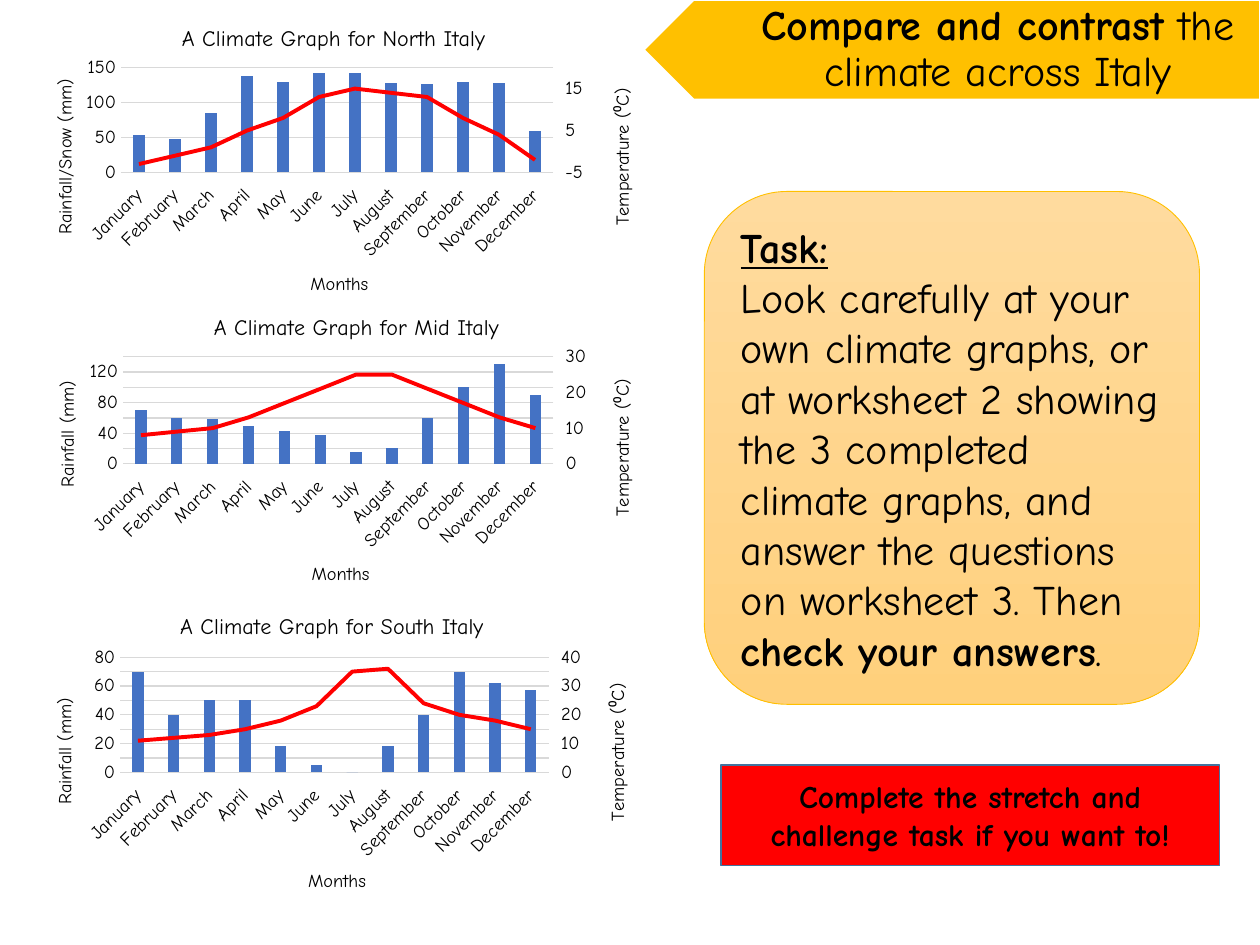
from copy import deepcopy

from lxml import etree
from pptx import Presentation, util as u
from pptx.chart import axis, data
from pptx.dml.color import RGBColor
from pptx.enum import chart as kinds, shapes, text
from pptx.oxml.ns import qn

FONT = "Comic Neue"
BLACK = RGBColor(0x00, 0x00, 0x00)
WHITE = RGBColor(0xFF, 0xFF, 0xFF)
GOLD = RGBColor(0xFF, 0xC0, 0x00)
PEACH = RGBColor(0xFF, 0xDB, 0x9E)
AMBER = RGBColor(0xFF, 0xD0, 0x7C)
RED = RGBColor(0xFF, 0x00, 0x00)
BLUE = RGBColor(0x44, 0x72, 0xC4)
NAVY = RGBColor(0x43, 0x73, 0x9E)
GREY = RGBColor(0xD9, 0xD9, 0xD9)

COLS, ROWS = 100, 75
CELL = u.Inches(0.1)
MONTHS = ["January", "February", "March", "April", "May", "June", "July",
          "August", "September", "October", "November", "December"]


def place(box):
    """Turn columns and rows of the grid into slide lengths."""
    return [u.Emu(round(n * CELL)) for n in box]


def style(font, size, bold=False):
    font.name, font.size, font.bold = FONT, u.Pt(size), bold
    font.color.rgb = BLACK


def add_run(para, words, size, bold=False, under=False):
    run = para.add_run()
    run.text = words
    style(run.font, size, bold)
    if under:
        run.font.underline = True


def add_box(slide, kind, box, line, width):
    shape = slide.shapes.add_shape(kind, *place(box))
    shape.shadow.inherit = False
    shape.line.color.rgb = line
    shape.line.width = u.Pt(width)
    frame = shape.text_frame
    frame.word_wrap = True
    frame.vertical_anchor = text.MSO_ANCHOR.MIDDLE
    return shape


def fill_box(shape, color):
    shape.fill.solid()
    shape.fill.fore_color.rgb = color


def add_tag(parent, tag, val):
    return etree.SubElement(parent, qn(tag), val=str(val))


def set_layout(parent, spot, index):
    """Fix a chart part at shares of the chart: x, y and maybe w, h."""
    for old in parent.findall(qn("c:layout")):
        parent.remove(old)
    layout = etree.Element(qn("c:layout"))
    parent.insert(index, layout)
    manual = etree.SubElement(layout, qn("c:manualLayout"))
    if len(spot) == 4:
        add_tag(manual, "c:layoutTarget", "inner")
    for name in ("xMode", "yMode"):
        add_tag(manual, "c:" + name, "edge")
    for name, val in zip("xywh", spot):
        add_tag(manual, "c:" + name, val)


def set_title(owner, title, words, size, spot, turn=False):
    """Title a chart or an axis; owner holds the c:title element."""
    frame = title.text_frame
    add_run(frame.paragraphs[0], words, size)
    if turn:
        body = frame._txBody.find(qn("a:bodyPr"))
        body.set("rot", "-5400000")
        body.set("vert", "horz")
    set_layout(owner.find(qn("c:title")), spot, 1)


def set_scale(side, low, high, step):
    side.minimum_scale, side.maximum_scale = low, high
    side.major_unit = step
    side.major_tick_mark = kinds.XL_TICK_MARK.NONE
    side.format.line.fill.background()
    style(side.tick_labels.font, 10.5)


def add_right(area):
    """Move the second series to a line on its own right-hand axis."""
    bar = area.find(qn("c:barChart"))
    line = etree.Element(qn("c:lineChart"))
    bar.addnext(line)
    add_tag(line, "c:grouping", "standard")
    add_tag(line, "c:varyColors", 0)
    ser = bar.findall(qn("c:ser"))[1]
    for flag in ser.findall(qn("c:invertIfNegative")):
        ser.remove(flag)
    line.append(ser)
    add_tag(line, "c:marker", 1)
    cat, val = area.find(qn("c:catAx")), area.find(qn("c:valAx"))
    cat2, val2 = deepcopy(cat), deepcopy(val)
    val.addnext(val2)
    val2.addnext(cat2)
    for side, own, other in ((cat2, 5001, 5002), (val2, 5002, 5001)):
        side.find(qn("c:axId")).set("val", str(own))
        side.find(qn("c:crossAx")).set("val", str(other))
        add_tag(line, "c:axId", own)
    cat2.find(qn("c:delete")).set("val", "1")
    val2.find(qn("c:axPos")).set("val", "r")
    val2.find(qn("c:crosses")).set("val", "max")
    return axis.ValueAxis(val2)


def add_graph(slide, box, place_name, unit, rain, heat, left, right, spots):
    """Draw rain as columns and heat as a line; spots place the titles."""
    feed = data.CategoryChartData()
    feed.categories = MONTHS
    feed.add_series("Series 1", rain)
    feed.add_series("Series 2", heat)
    chart = slide.shapes.add_chart(
        kinds.XL_CHART_TYPE.COLUMN_CLUSTERED, *place(box), feed).chart
    style(chart.font, 10.5)
    chart.has_legend = False
    head, rise, fall, deep = spots
    chart.has_title = True
    set_title(chart._chartSpace.chart, chart.chart_title,
              f"A Climate Graph for {place_name} Italy", 12.6, (head, 0.065))
    area = chart._chartSpace.chart.plotArea
    set_layout(area, (0.165, 0.215, 0.69, deep), 0)

    base, side = chart.category_axis, chart.value_axis
    side.has_major_gridlines = False
    set_scale(side, *left)
    temp = add_right(area)
    set_scale(temp, *right)
    temp.major_tick_mark = kinds.XL_TICK_MARK.OUTSIDE
    side.has_major_gridlines = True
    side.major_gridlines.format.line.color.rgb = GREY
    side.major_gridlines.format.line.width = u.Pt(0.75)

    base.major_tick_mark = kinds.XL_TICK_MARK.NONE
    base.tick_label_position = kinds.XL_TICK_LABEL_POSITION.LOW
    base.format.line.color.rgb = GREY
    base.format.line.width = u.Pt(0.75)
    style(base.tick_labels.font, 10.5)
    base._element.find(qn("c:txPr")).find(qn("a:bodyPr")).set("rot", "-2700000")
    for part, words, spot in ((base, "Months", (0.462, 0.85)),
                              (side, unit, (0.05, rise)),
                              (temp, "Temperature (⁰C)", (0.94, fall))):
        set_title(part._element, part.axis_title, words, 10.5, spot,
                  part is not base)

    bars, line = chart.plots
    bars.gap_width = 219
    bars.vary_by_categories = False
    fill_box(bars.series[0].format, BLUE)
    curve = line.series[0]
    curve.smooth = False
    curve.marker.style = kinds.XL_MARKER_STYLE.NONE
    curve.format.line.color.rgb = RED
    curve.format.line.width = u.Pt(2.25)


def add_header(slide, box):
    x, y, w, h = box
    arrow = add_box(slide, shapes.MSO_SHAPE.PENTAGON, box, WHITE, 1)
    arrow.rotation = 180
    fill_box(arrow, GOLD)
    inset = 2.8
    frame = slide.shapes.add_textbox(
        *place((x + inset, y, w - inset, h))).text_frame
    frame.word_wrap = True
    frame.vertical_anchor = text.MSO_ANCHOR.MIDDLE
    frame.margin_left, frame.margin_right = u.Inches(0.64), u.Inches(0.19)
    frame.margin_top = frame.margin_bottom = u.Inches(0.1)
    para = frame.paragraphs[0]
    para.alignment = text.PP_ALIGN.CENTER
    para.line_spacing = 0.9
    add_run(para, "Compare and contrast ", 24, True)
    add_run(para, "the climate across Italy", 24)


def add_task(slide, box):
    card = add_box(slide, shapes.MSO_SHAPE.ROUNDED_RECTANGLE, box, GOLD, 0.5)
    card.fill.gradient()
    card.fill.gradient_angle = 270
    for stop, color in zip(card.fill.gradient_stops, (PEACH, AMBER)):
        stop.color.rgb = color
    head, body = card.text_frame.paragraphs[0], card.text_frame.add_paragraph()
    head.alignment = body.alignment = text.PP_ALIGN.LEFT
    add_run(head, "Task:", 24, True, True)
    add_run(body, "Look carefully at your own climate graphs, or at worksheet 2 "
            "showing the 3 completed climate graphs, and answer the questions "
            "on worksheet 3. Then ", 24)
    add_run(body, "check your answers", 24, True)
    add_run(body, ".", 24)


def add_stretch(slide, box):
    card = add_box(slide, shapes.MSO_SHAPE.RECTANGLE, box, NAVY, 1)
    fill_box(card, RED)
    para = card.text_frame.paragraphs[0]
    para.alignment = text.PP_ALIGN.CENTER
    add_run(para, "Complete the stretch and challenge task if you want to!", 18, True)


GRAPHS = [
    ((1.4, 0, 49.7, 25), "North", "Rainfall/Snow (mm)",
     (53, 48, 85, 138, 130, 142, 142, 128, 127, 129, 128, 60),
     (-3, -1, 1, 5, 8, 13, 15, 14, 13, 8, 4, -2),
     (0, 150, 50), (-5, 20, 10), (0.256, 0.24, 0.27, 0.333)),
    ((1.6, 22.9, 49.5, 25.2), "Mid", "Rainfall (mm)",
     (70, 60, 58, 50, 43, 37, 15, 20, 60, 100, 130, 90),
     (8, 9, 10, 13, 17, 21, 25, 25, 21, 17, 13, 10),
     (0, 140, 20), (0, 30, 10), (0.304, 0.28, 0.275, 0.337)),
    ((1.4, 46.6, 49.3, 25.9), "South", "Rainfall (mm)",
     (70, 40, 50, 50, 18, 5, 0, 18, 40, 70, 62, 57),
     (11, 12, 13, 15, 18, 23, 35, 36, 24, 20, 18, 15),
     (0, 80, 10), (0, 40, 10), (0.255, 0.33, 0.285, 0.353)),
]


def main():
    deck = Presentation()
    deck.slide_width, deck.slide_height = COLS * CELL, ROWS * CELL
    slide = deck.slides.add_slide(deck.slide_layouts[6])
    add_header(slide, (51.1, 0, 48.9, 7.9))
    for graph in GRAPHS:
        add_graph(slide, *graph)
    add_task(slide, (55.9, 15.2, 39.3, 40.7))
    add_stretch(slide, (57.2, 60.7, 39.6, 8))
    deck.save("out.pptx")


if __name__ == "__main__":
    main()
